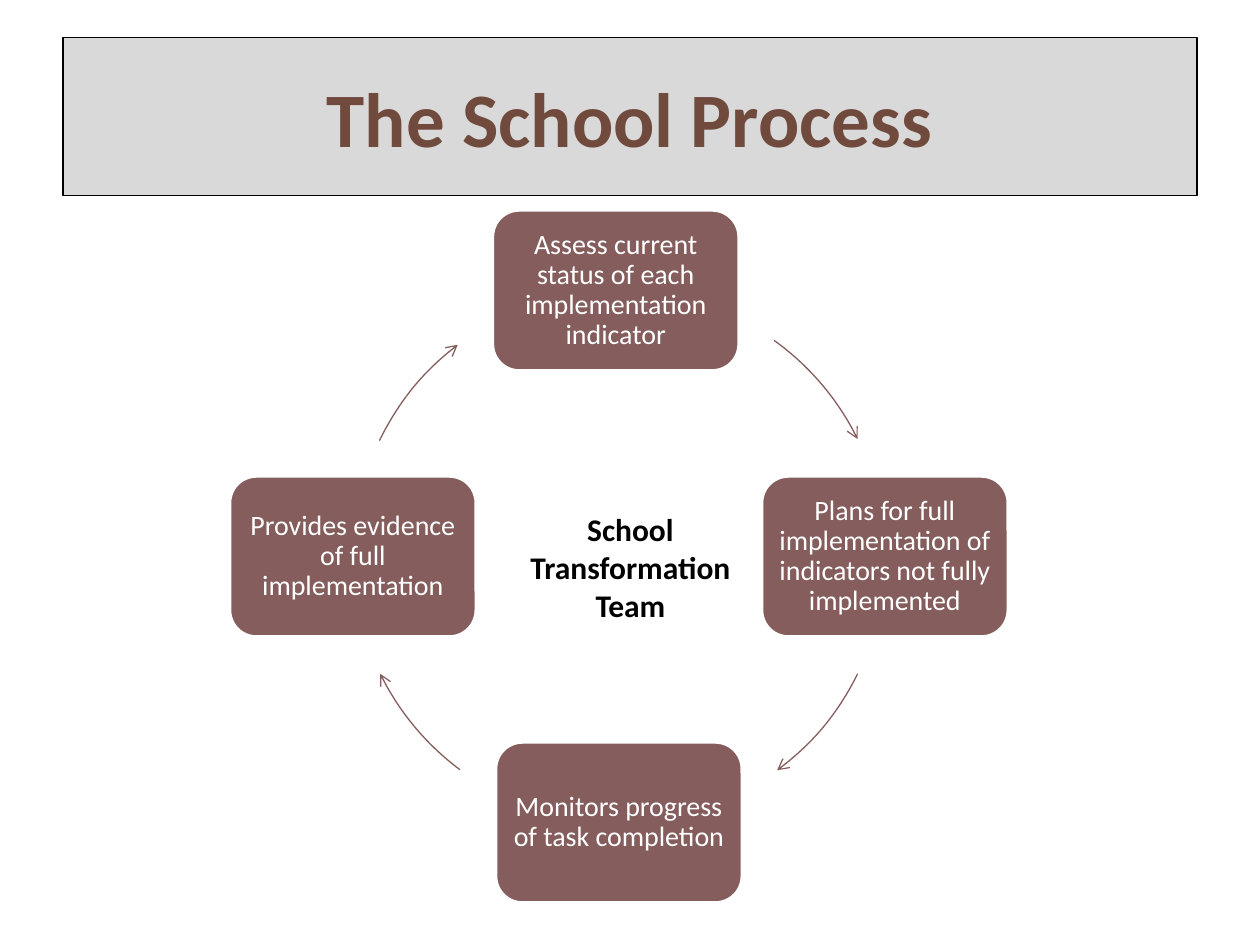
from lxml import etree
from pptx import Presentation
from pptx import util as u
from pptx.dml.color import RGBColor
from pptx.enum import shapes, text
from pptx.oxml.ns import qn

Pt = u.Pt
BROWN = "855D5D"


def color(value):
    return RGBColor.from_string(value)


def write(shape, words, size, ink, bold=False, spacing=1.0, anchor=text.MSO_ANCHOR.MIDDLE):
    frame = shape.text_frame
    frame.word_wrap = True
    frame.vertical_anchor = anchor
    para = frame.paragraphs[0]
    para.alignment = text.PP_ALIGN.CENTER
    para.line_spacing = spacing
    span = para.add_run()
    span.text = words
    span.font.name = "Calibri"
    span.font.size = Pt(size)
    span.font.bold = bold
    span.font.color.rgb = color(ink)


deck = Presentation()
deck.slide_width, deck.slide_height = Pt(720), Pt(540)
page = deck.slides.add_slide(deck.slide_layouts[6])

title = page.shapes.add_shape(shapes.MSO_SHAPE.RECTANGLE, Pt(36), Pt(21.6), Pt(648), Pt(90))
title.shadow.inherit = False
title.fill.solid()
title.fill.fore_color.rgb = color("D9D9D9")
title.line.color.rgb = color("000000")
title.line.width = Pt(0.75)
write(title, "The School Process", 44, "704A3D", bold=True)

center_x, center_y, radius = 353.7, 318, 152
box_width, box_height = 141, 92
steps = [
    ("Assess current status of each implementation indicator", -1.8, -radius, 305.7, 333.8),
    ("Plans for full implementation of indicators not fully implemented", radius, 0, 26.2, 53.5),
    ("Monitors progress of task completion", 0, radius, 126.7, 153.8),
    ("Provides evidence of full implementation", -radius, 0, 205.8, 232.7),
]

for words, across, down, start, end in steps:
    box = page.shapes.add_shape(
        shapes.MSO_SHAPE.ROUNDED_RECTANGLE,
        Pt(center_x + across - box_width / 2), Pt(center_y + down - box_height / 2),
        Pt(box_width), Pt(box_height))
    box.shadow.inherit = False
    box.fill.solid()
    box.fill.fore_color.rgb = color(BROWN)
    box.line.color.rgb = color("FFFFFF")
    box.line.width = Pt(2)
    frame = box.text_frame
    frame.margin_left = frame.margin_right = Pt(4.5)
    frame.margin_top = frame.margin_bottom = Pt(1)
    write(box, words, 16, "FFFFFF", spacing=0.9)

    arc = page.shapes.add_shape(
        shapes.MSO_SHAPE.ARC, Pt(center_x - radius), Pt(center_y - radius),
        Pt(2 * radius), Pt(2 * radius))
    arc.shadow.inherit = False
    arc.adjustments[0] = start * 0.6
    arc.adjustments[1] = end * 0.6
    arc.fill.background()
    arc.line.color.rgb = color(BROWN)
    arc.line.width = Pt(0.75)
    etree.SubElement(arc.line._get_or_add_ln(), qn("a:tailEnd"), type="arrow")

team = page.shapes.add_textbox(Pt(282.2), Pt(288), Pt(156.2), Pt(72.7))
write(team, "School Transformation Team", 18, "000000", bold=True, anchor=text.MSO_ANCHOR.TOP)

deck.save("out.pptx")
